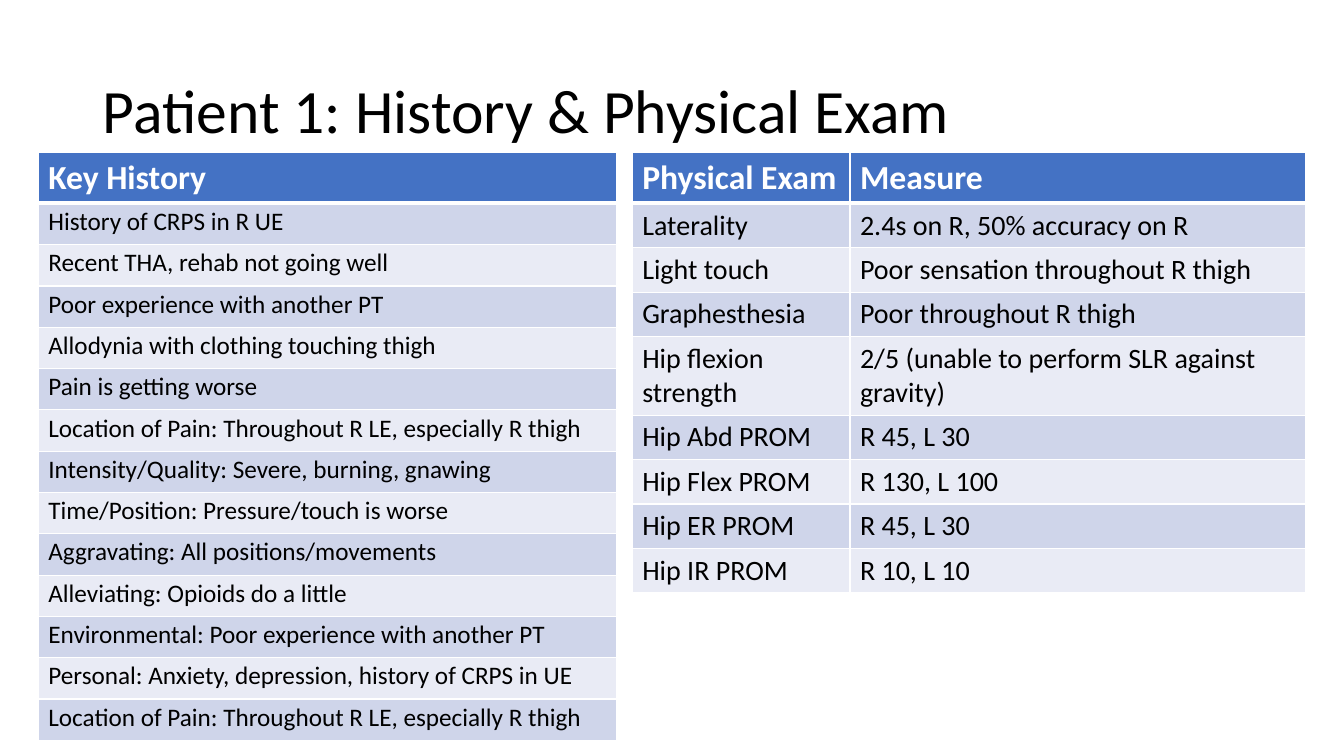
from dataclasses import dataclass

from lxml.etree import SubElement
from pptx import Presentation
from pptx.dml.color import RGBColor
from pptx.enum.text import MSO_ANCHOR, MSO_AUTO_SIZE, PP_ALIGN
from pptx.oxml.ns import qn
from pptx.slide import Slide
from pptx.table import _Cell as Cell
from pptx.text.text import TextFrame
from pptx.util import Inches, Pt


@dataclass(frozen=True)
class Theme:
    font: str = "Calibri"
    ink: str = "000000"
    white: str = "FFFFFF"
    header: str = "4472C4"
    bands: tuple[str, str] = ("CFD5EA", "E9EBF5")
    title_size: int = 44
    header_size: int = 24
    thin_rule: float = 1
    thick_rule: float = 3


@dataclass(frozen=True)
class Grid:
    left: float
    widths: tuple[float, ...]
    rows: tuple[tuple[str, ...], ...]
    body_size: int
    line_spacing: float | None = None
    space_before: float | None = None


THEME = Theme()
TABLE_TOP = 1.51
ROW_HEIGHT = 0.41

HISTORY = Grid(
    left=0.38,
    widths=(5.74,),
    rows=(
        ("Key History",),
        ("History of CRPS in R UE",),
        ("Recent THA, rehab not going well",),
        ("Poor experience with another PT",),
        ("Allodynia with clothing touching thigh",),
        ("Pain is getting worse",),
        ("Location of Pain: Throughout R LE, especially R thigh",),
        ("Intensity/Quality: Severe, burning, gnawing",),
        ("Time/Position: Pressure/touch is worse",),
        ("Aggravating: All positions/movements",),
        ("Alleviating: Opioids do a little",),
        ("Environmental: Poor experience with another PT",),
        ("Personal: Anxiety, depression, history of CRPS in UE",),
        ("Location of Pain: Throughout R LE, especially R thigh",),
    ),
    body_size=18,
    line_spacing=0.9,
    space_before=10,
)

EXAM = Grid(
    left=6.27,
    widths=(2.16, 4.52),
    rows=(
        ("Physical Exam", "Measure"),
        ("Laterality", "2.4s on R, 50% accuracy on R"),
        ("Light touch", "Poor sensation throughout R thigh"),
        ("Graphesthesia", "Poor throughout R thigh"),
        ("Hip flexion strength", "2/5 (unable to perform SLR against gravity)"),
        ("Hip Abd PROM", "R 45, L 30"),
        ("Hip Flex PROM", "R 130, L 100"),
        ("Hip ER PROM", "R 45, L 30"),
        ("Hip IR PROM", "R 10, L 10"),
    ),
    body_size=20,
)


def write_text(
    frame: TextFrame,
    text: str,
    *,
    size: int,
    color: str = THEME.ink,
    bold: bool = False,
    line_spacing: float | None = None,
    space_before: float | None = None,
) -> None:
    para = frame.paragraphs[0]
    para.alignment = PP_ALIGN.LEFT
    para.line_spacing = line_spacing
    if space_before is not None:
        para.space_before = Pt(space_before)
    span = para.add_run()
    span.text = text
    span.font.name = THEME.font
    span.font.size = Pt(size)
    span.font.bold = bold
    span.font.color.rgb = RGBColor.from_string(color)


def rule_cell(cell: Cell, row: int) -> None:
    properties = cell._tc.get_or_add_tcPr()
    for side in "LRTB":
        thick = (row, side) in ((0, "B"), (1, "T"))
        width = THEME.thick_rule if thick else THEME.thin_rule
        line = SubElement(properties, qn(f"a:ln{side}"), w=str(Pt(width)))
        fill = SubElement(line, qn("a:solidFill"))
        SubElement(fill, qn("a:srgbClr"), val=THEME.white)


def add_title(page: Slide, text: str) -> None:
    title = page.shapes.title
    title.left, title.top = Inches(0.92), Inches(0.4)
    title.width, title.height = Inches(11.5), Inches(1.45)
    frame = title.text_frame
    frame.word_wrap = True
    frame.auto_size = MSO_AUTO_SIZE.NONE
    frame.vertical_anchor = MSO_ANCHOR.MIDDLE
    write_text(frame, text, size=THEME.title_size, line_spacing=0.9)


def add_grid(page: Slide, grid: Grid) -> None:
    table = page.shapes.add_table(
        len(grid.rows),
        len(grid.widths),
        Inches(grid.left),
        Inches(TABLE_TOP),
        Inches(sum(grid.widths)),
        Inches(ROW_HEIGHT * len(grid.rows)),
    ).table
    for column, width in zip(table.columns, grid.widths):
        column.width = Inches(width)
    for row, texts in enumerate(grid.rows):
        table.rows[row].height = Inches(ROW_HEIGHT)
        for column, text in enumerate(texts):
            cell = table.cell(row, column)
            rule_cell(cell, row)
            cell.fill.solid()
            if row == 0:
                shade = THEME.header
                write_text(
                    cell.text_frame,
                    text,
                    size=THEME.header_size,
                    color=THEME.white,
                    bold=True,
                )
            else:
                shade = THEME.bands[(row - 1) % 2]
                write_text(
                    cell.text_frame,
                    text,
                    size=grid.body_size,
                    line_spacing=grid.line_spacing,
                    space_before=grid.space_before,
                )
            cell.fill.fore_color.rgb = RGBColor.from_string(shade)


def main() -> None:
    deck = Presentation()
    deck.slide_width, deck.slide_height = Inches(13.33), Inches(7.5)
    page = deck.slides.add_slide(deck.slide_layouts.get_by_name("Title Only"))
    add_title(page, "Patient 1: History & Physical Exam")
    for grid in (HISTORY, EXAM):
        add_grid(page, grid)
    deck.save("out.pptx")


if __name__ == "__main__":
    main()
